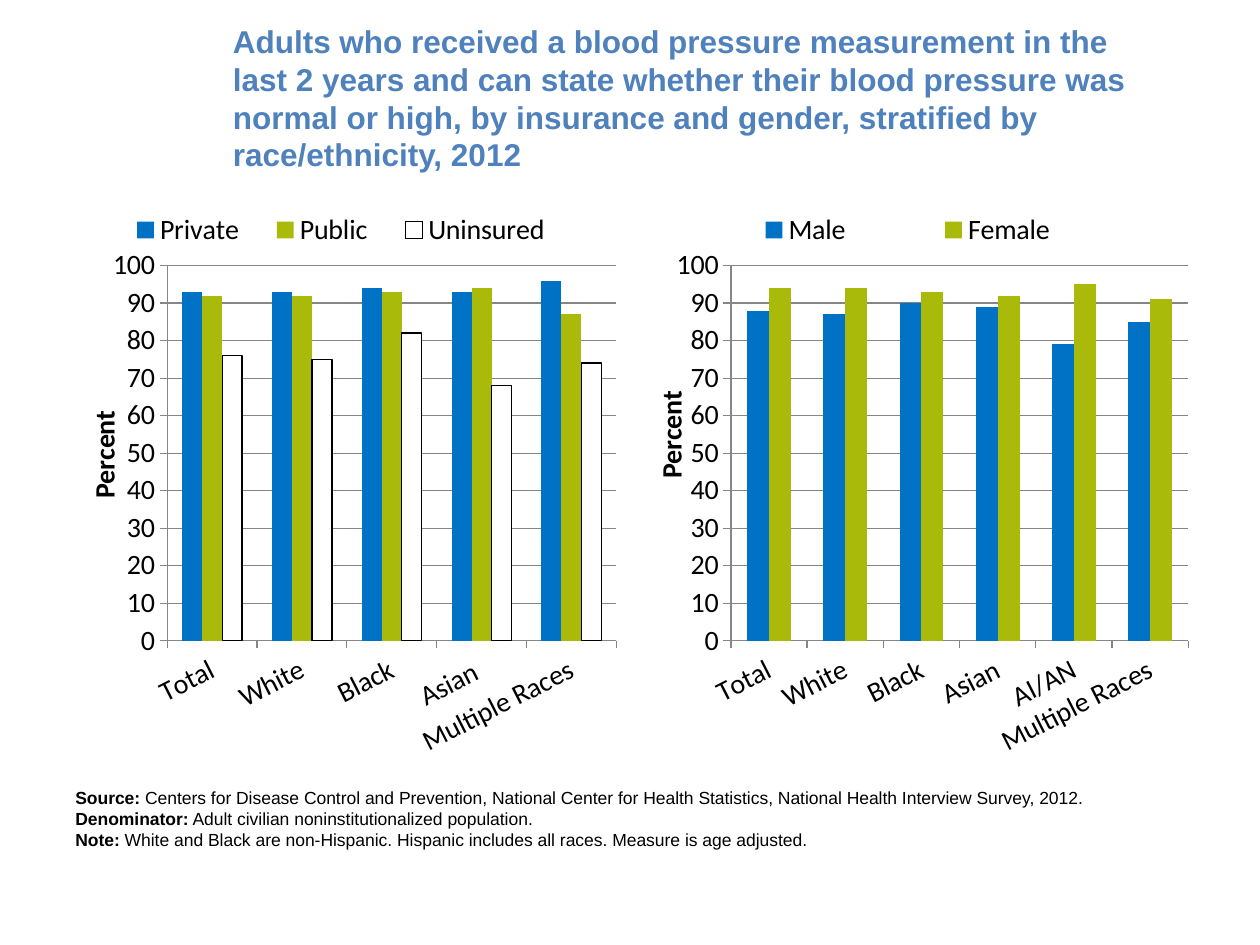
from pptx import Presentation
from pptx.chart.data import CategoryChartData
from pptx.dml.color import RGBColor
from pptx.enum.chart import XL_CHART_TYPE, XL_LEGEND_POSITION, XL_TICK_MARK
from pptx.enum.text import MSO_ANCHOR
from pptx.oxml import parse_xml
from pptx.oxml.ns import nsdecls
from pptx.util import Inches, Pt

THEME = {
    "heading": RGBColor(0x4F, 0x81, 0xBD),
    "ink": RGBColor(0, 0, 0),
    "grid": RGBColor(0x86, 0x86, 0x86),
    "bars": [RGBColor(0x00, 0x72, 0xC6), RGBColor(0xAA, 0xBA, 0x0A), RGBColor(0xFF, 0xFF, 0xFF)],
    "text_font": "Arial",
    "chart_font": "Calibri",
    "heading_size": Pt(18),
    "chart_size": Pt(16),
    "note_size": Pt(10),
}


def style_font(font, face, size, color, bold=None):
    font.name, font.size, font.bold = face, size, bold
    font.color.rgb = color


def manual_layout(x, y, w=None, h=None, inner=False):
    """Layout element in shares of the chart's size."""
    tags = '<c:layoutTarget val="inner"/>' if inner else ""
    tags += '<c:xMode val="edge"/><c:yMode val="edge"/>'
    for tag, share in zip("xywh", (x, y, w, h)):
        if share is not None:
            tags += f'<c:{tag} val="{share}"/>'
    return parse_xml(f'<c:layout {nsdecls("c")}><c:manualLayout>{tags}</c:manualLayout></c:layout>')


prs = Presentation()
prs.slide_width, prs.slide_height = Inches(10), Inches(7.5)
slide = prs.slides.add_slide(prs.slide_layouts[6])
margin, chart_side = Inches(0.5), Inches(4.5)

# Heading
heading = slide.shapes.add_textbox(Inches(1.75), Inches(0.3), Inches(7.48), Inches(0.95)).text_frame
heading.word_wrap = True
heading.vertical_anchor = MSO_ANCHOR.MIDDLE
heading.text = (
    "Adults who received a blood pressure measurement in the last 2 years and can state "
    "whether their blood pressure was normal or high, by insurance and gender, "
    "stratified by race/ethnicity, 2012"
)
style_font(heading.paragraphs[0].font, THEME["text_font"], THEME["heading_size"], THEME["heading"], True)

# Charts, side by side
panels = [
    {
        "groups": ["Total", "White", "Black", "Asian ", "Multiple Races"],
        "series": {
            "Private": [93, 93, 94, 93, 96],
            "Public": [92, 92, 93, 94, 87],
            "Uninsured": [76, 75, 82, 68, 74],
        },
        "plot": (0.184, 0.113, 0.792, 0.662),
        "percent": (0.03, 0.36),
    },
    {
        "groups": ["Total", "White", "Black", "Asian", "AI/AN", "Multiple Races"],
        "series": {
            "Male": [88, 87, 90, 89, 79, 85],
            "Female": [94, 94, 93, 92, 95, 91],
        },
        "plot": (0.178, 0.113, 0.807, 0.662),
        "percent": (0.03, 0.325),
    },
]
for column, panel in enumerate(panels):
    figures = CategoryChartData(number_format="0")
    figures.categories = panel["groups"]
    for name, values in panel["series"].items():
        figures.add_series(name, values)
    chart = slide.shapes.add_chart(
        XL_CHART_TYPE.COLUMN_CLUSTERED, margin + column * chart_side, Inches(1.6),
        chart_side, chart_side, figures,
    ).chart
    style_font(chart.font, THEME["chart_font"], THEME["chart_size"], THEME["ink"])
    chart.has_title = False

    # Bars
    bars = chart.plots[0]
    bars.gap_width, bars.overlap, bars.vary_by_categories = 150, 0, False
    for series, color in zip(bars.series, THEME["bars"]):
        series.invert_if_negative = False
        series.format.fill.solid()
        series.format.fill.fore_color.rgb = color
        if series.name == "Uninsured":
            series.format.line.color.rgb = THEME["ink"]
            series.format.line.width = Pt(0.75)

    # Axes
    race_axis, percent_axis = chart.category_axis, chart.value_axis
    percent_axis.minimum_scale, percent_axis.maximum_scale = 0, 100
    percent_axis.major_unit = 10
    percent_axis.tick_labels.number_format = "0"
    percent_axis.tick_labels.number_format_is_linked = False
    percent_axis.has_major_gridlines = True
    for line_owner in (race_axis, percent_axis, percent_axis.major_gridlines):
        line_owner.format.line.color.rgb = THEME["grid"]
        line_owner.format.line.width = Pt(0.75)
    for axis in (race_axis, percent_axis):
        axis.major_tick_mark = XL_TICK_MARK.OUTSIDE
        style_font(axis.tick_labels.font, THEME["chart_font"], THEME["chart_size"], THEME["ink"])
    race_axis._element.txPr.bodyPr.set("rot", str(-27 * 60000))

    # Axis title
    percent = percent_axis.axis_title
    percent.text_frame.text = "Percent"
    style_font(percent.text_frame.paragraphs[0].font, THEME["chart_font"], THEME["chart_size"],
               THEME["ink"], True)
    percent.text_frame._txBody.bodyPr.set("rot", str(-90 * 60000))
    percent.text_frame._txBody.bodyPr.set("vert", "horz")
    for old in percent._element.findall("{*}layout"):
        percent._element.remove(old)
    percent._element.tx.addnext(manual_layout(*panel["percent"]))

    # Legend
    chart.has_legend = True
    legend = chart.legend
    legend.position = XL_LEGEND_POSITION.TOP
    legend.include_in_layout = False
    style_font(legend.font, THEME["chart_font"], THEME["chart_size"], THEME["ink"])
    for old in legend._element.findall("{*}layout"):
        legend._element.remove(old)
    legend._element.find("{*}legendPos").addnext(manual_layout(0.08, 0.01, 0.82, 0.08))

    # Plot position
    plot_area = chart._chartSpace.chart.plotArea
    for old in plot_area.findall("{*}layout"):
        plot_area.remove(old)
    plot_area.insert(0, manual_layout(*panel["plot"], inner=True))

# Source notes
notes = slide.shapes.add_textbox(margin, Inches(6.2), Inches(9), Inches(0.61)).text_frame
notes.word_wrap = True
remarks = {
    "Source:": " Centers for Disease Control and Prevention, National Center for Health Statistics, "
               "National Health Interview Survey, 2012.",
    "Denominator:": " Adult civilian noninstitutionalized population.",
    "Note:": " White and Black are non-Hispanic. Hispanic includes all races. Measure is age adjusted.",
}
for row, (label, remark) in enumerate(remarks.items()):
    line = notes.add_paragraph() if row else notes.paragraphs[0]
    line.add_run().text = label
    line.add_run().text = remark
    line.runs[0].font.bold = True
    style_font(line.font, THEME["text_font"], THEME["note_size"], THEME["ink"])

prs.save("out.pptx")
